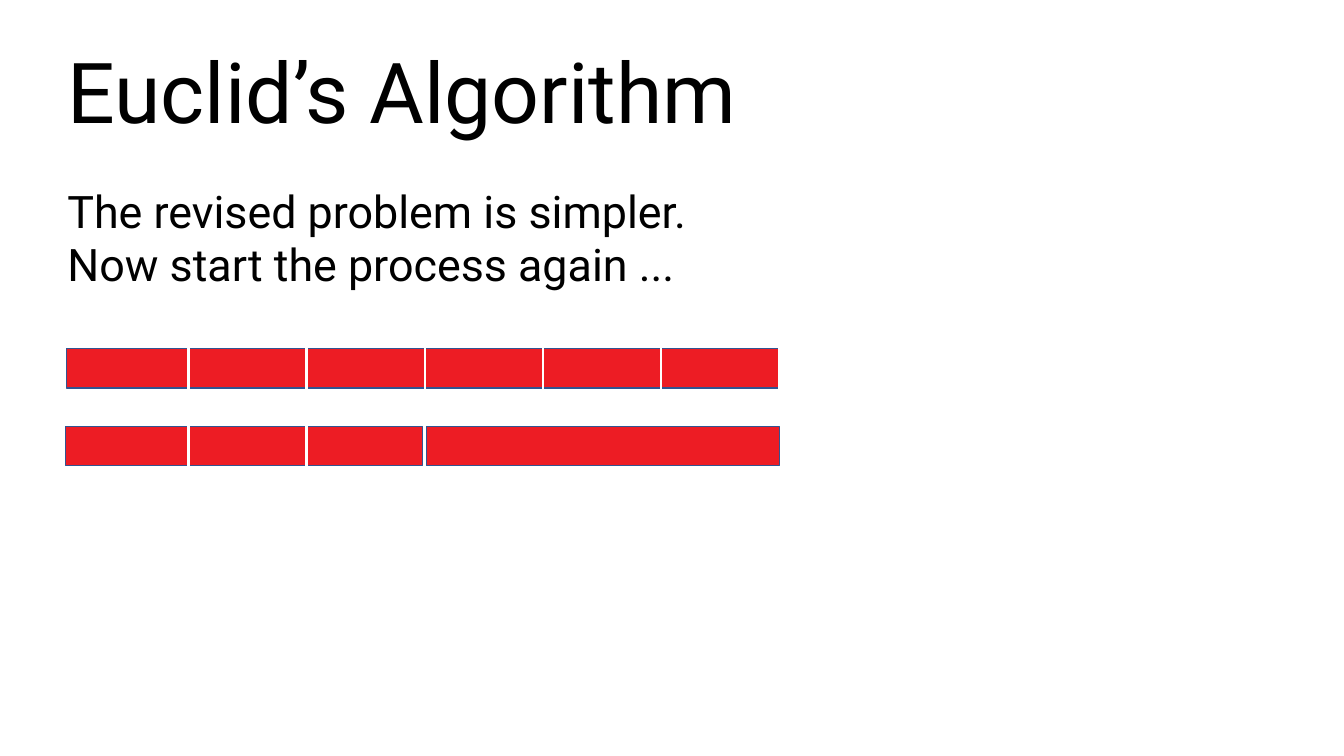
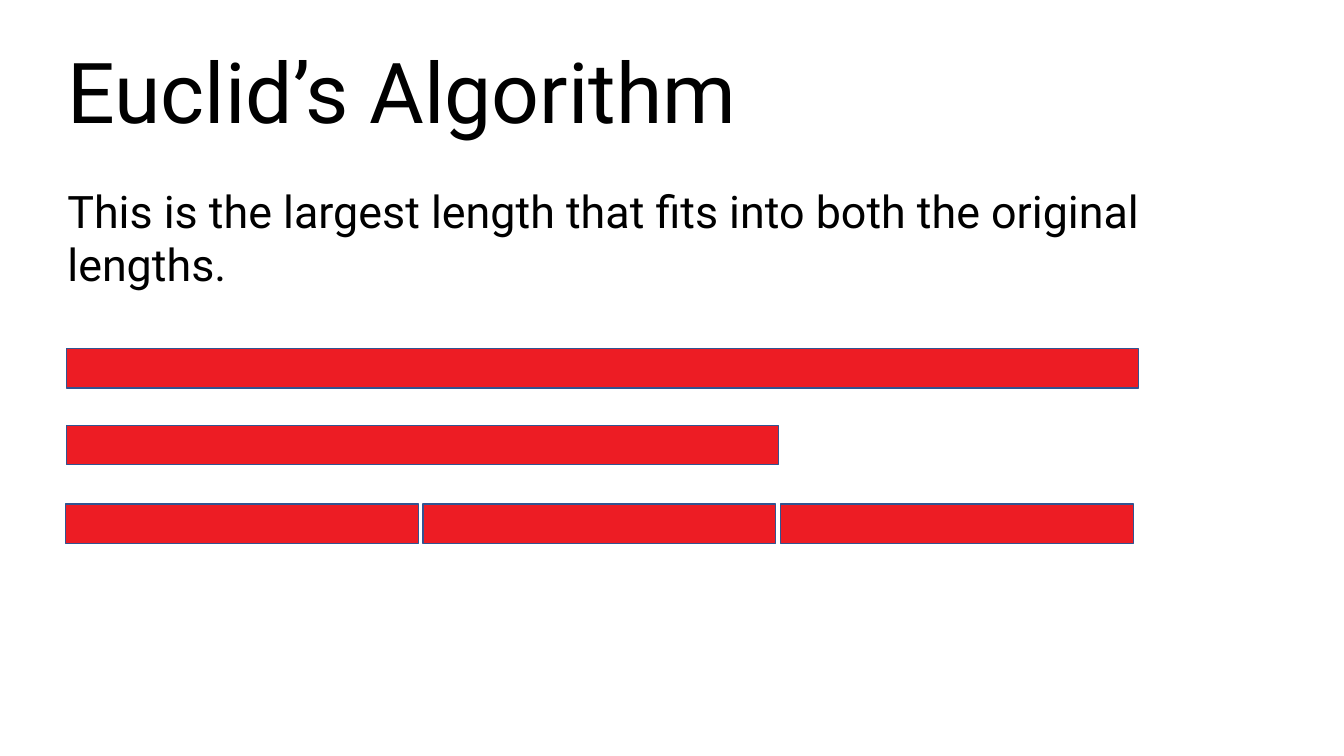
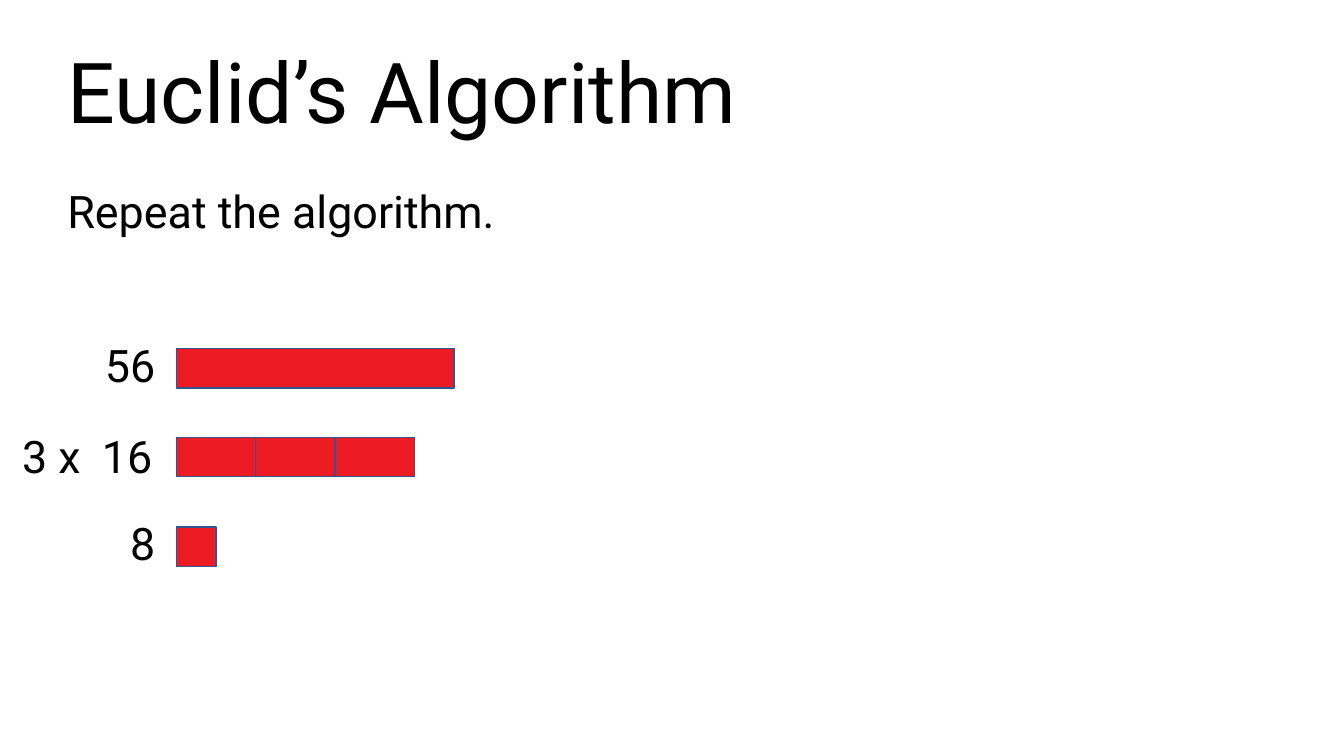
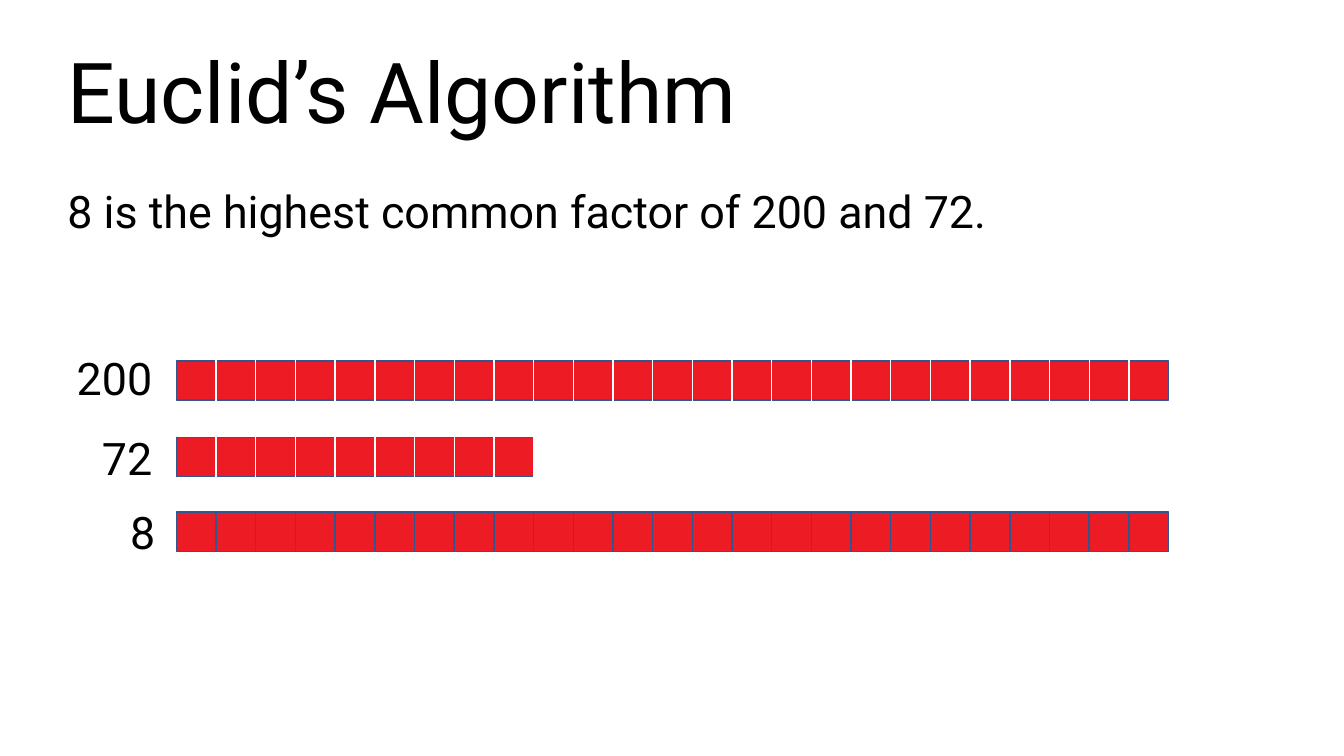
from pptx import Presentation
from pptx.dml.color import RGBColor
from pptx.enum.shapes import MSO_CONNECTOR, MSO_SHAPE
from pptx.enum.text import MSO_ANCHOR, MSO_AUTO_SIZE, PP_ALIGN
from pptx.oxml.ns import qn
from pptx.util import Inches, Pt
from lxml import etree

BLACK = RGBColor(0x00, 0x00, 0x00)
WHITE = RGBColor(0xFF, 0xFF, 0xFF)
RED = RGBColor(0xED, 0x1C, 0x24)
BLUE = RGBColor(0x32, 0x54, 0x91)
FONT = "Roboto"
TITLE = "Euclid’s Algorithm"

BAR_HEIGHT = 0.39
UNIT = 9.84 / 200
SCALE_LEFT = 1.75
EIGHT = 8 * UNIT
SIXTEEN = 16 * UNIT
CUT_STEP = (10.07 - 1.87) / 7

# statement: lines; labels: text, left, top
# bars: left, top, width, count, pitch; cuts: left, top, bottom, count, pitch, weight
SLIDES = [
    {
        "statement": ["The revised problem is simpler.", "Now start the process again ..."],
        "bars": [(0.66, 3.46, 7.06, 1, 0), (0.65, 4.23, 3.54, 1, 0)],
        "cuts": (1.87, 3.3, 4.82, 6, CUT_STEP, 1.75),
        "remainder": [(4.23, 4.23, 3.5, 1, 0)],
    },
    {
        "statement": ["This is the largest length that fits into both the original lengths."],
        "bars": [(0.66, 3.46, 10.63, 1, 0), (0.66, 4.22, 7.06, 1, 0), (0.65, 5, 3.5, 3, 3.545)],
    },
    {
        "statement": ["Repeat the algorithm."],
        "labels": [("56", 0.57, 3.3), ("16", 0.54, 4.2), ("3 x ", -0.06, 4.2), ("8", 0.57, 5.07)],
        "bars": [
            (SCALE_LEFT, 3.46, 56 * UNIT, 1, 0),
            (SCALE_LEFT, 4.34, SIXTEEN, 3, SIXTEEN),
            (SCALE_LEFT, 5.23, EIGHT, 1, 0),
        ],
    },
    {
        "statement": ["8 is the highest common factor of 200 and 72."],
        "labels": [("200", 0.54, 3.43), ("72", 0.54, 4.22), ("8", 0.57, 4.96)],
        "bars": [
            (SCALE_LEFT, 3.58, 200 * UNIT, 1, 0),
            (SCALE_LEFT, 4.34, 72 * UNIT, 1, 0),
            (SCALE_LEFT, 5.08, EIGHT, 25, EIGHT),
        ],
        "cuts": (SCALE_LEFT + EIGHT, 3.34, 4.93, 24, EIGHT, 1),
    },
]


def write(frame, lines, size, align=PP_ALIGN.LEFT):
    frame.word_wrap = True
    frame.auto_size = MSO_AUTO_SIZE.NONE
    frame.vertical_anchor = MSO_ANCHOR.TOP
    for i, line in enumerate(lines):
        paragraph = frame.add_paragraph() if i else frame.paragraphs[0]
        paragraph.alignment = align
        run = paragraph.add_run()
        run.text = line
        run.font.name = FONT
        run.font.size = Pt(size)
        run.font.color.rgb = BLACK


def add_title(slide):
    title = slide.shapes.title
    title.left, title.top = Inches(0.57), Inches(0.34)
    title.width, title.height = Inches(9.2), Inches(1.11)
    write(title.text_frame, [TITLE], 60)


def add_text(slide, lines, left, top, width, height, align=PP_ALIGN.LEFT):
    box = slide.shapes.add_textbox(Inches(left), Inches(top), Inches(width), Inches(height))
    write(box.text_frame, lines, 32, align)


def add_bars(slide, rows):
    for left, top, width, count, pitch in rows:
        for i in range(count):
            bar = slide.shapes.add_shape(
                MSO_SHAPE.RECTANGLE, Inches(left + i * pitch), Inches(top),
                Inches(width), Inches(BAR_HEIGHT))
            bar.shadow.inherit = False
            bar.fill.solid()
            bar.fill.fore_color.rgb = RED
            bar.line.color.rgb = BLUE
            bar.line.width = Pt(1)


def add_cuts(slide, left, top, bottom, count, pitch, weight):
    for i in range(count):
        x = Inches(left + i * pitch)
        cut = slide.shapes.add_connector(
            MSO_CONNECTOR.STRAIGHT, x, Inches(top), x, Inches(bottom))
        cut.line.color.rgb = WHITE
        cut.line.width = Pt(weight)
        etree.SubElement(cut._element.spPr, qn("a:effectLst"))


def main():
    deck = Presentation()
    deck.slide_width, deck.slide_height = Inches(13.33), Inches(7.5)
    for content in SLIDES:
        slide = deck.slides.add_slide(deck.slide_layouts[5])
        add_title(slide)
        statement = content["statement"]
        add_text(slide, statement, 0.57, 1.77, 12.13, 0.1 + 0.54 * len(statement))
        for label, left, top in content.get("labels", []):
            add_text(slide, [label], left, top, 1.07, 0.64, PP_ALIGN.RIGHT)
        add_bars(slide, content["bars"])
        if "cuts" in content:
            add_cuts(slide, *content["cuts"])
        add_bars(slide, content.get("remainder", []))
    deck.save("out.pptx")


if __name__ == "__main__":
    main()
